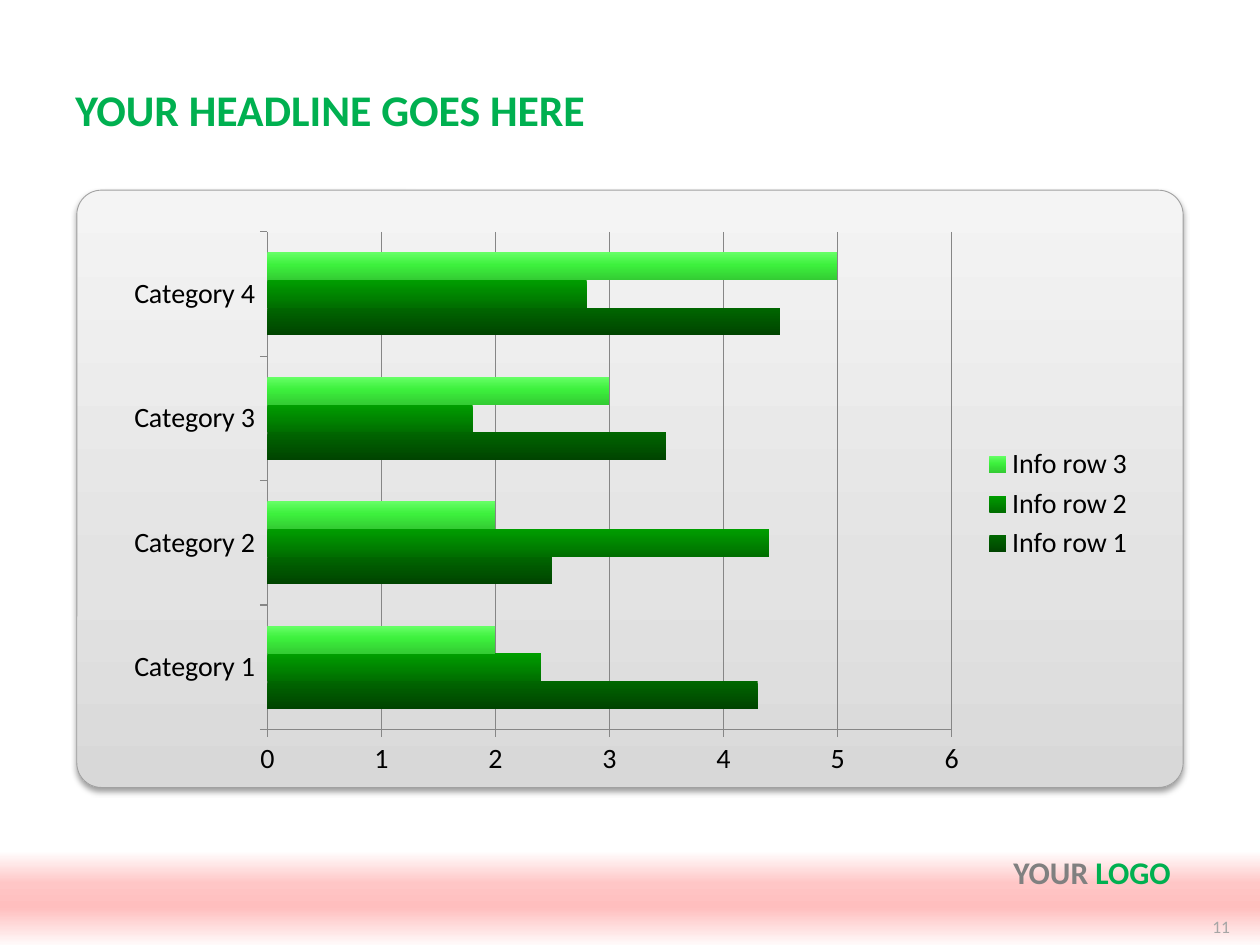
from lxml import etree
from pptx import Presentation
from pptx.chart.data import CategoryChartData
from pptx.dml.color import RGBColor
from pptx.enum.chart import XL_CHART_TYPE, XL_LEGEND_POSITION, XL_TICK_MARK
from pptx.enum.shapes import MSO_SHAPE
from pptx.enum.text import MSO_ANCHOR, PP_ALIGN
from pptx.oxml import parse_xml
from pptx.oxml.ns import nsdecls, qn
from pptx.util import Inches, Pt

BAR = XL_CHART_TYPE.BAR_CLUSTERED
RIGHT = XL_LEGEND_POSITION.RIGHT
OUT = XL_TICK_MARK.OUTSIDE
RECT, ROUND = MSO_SHAPE.RECTANGLE, MSO_SHAPE.ROUNDED_RECTANGLE
TOP, MID = MSO_ANCHOR.TOP, MSO_ANCHOR.MIDDLE
LEFT_AL, RIGHT_AL = PP_ALIGN.LEFT, PP_ALIGN.RIGHT

FONT = "Calibri"
WIDE, HIGH = 10, 7.5
CATS = [f"Category {n}" for n in range(1, 5)]
ROWS = [
    ("Info row 1", (4.3, 2.5, 3.5, 4.5), ((0, "006600"), (100, "004400"))),
    ("Info row 2", (2.4, 4.4, 1.8, 2.8), ((0, "009E00"), (100, "006E00"))),
    ("Info row 3", (2, 2, 3, 5), ((0, "66FF66"), (45, "3DF03D"), (100, "33CC33"))),
]
PANEL = ((0, "F4F4F4"), (65, "E3E3E3"), (100, "D8D8D8"))
BAND = ((0, "FFFFFF"), (35, "FFC6C6"), (60, "FFBEBE"), (100, "FFFAFA"))
PLOT = {"x": 0.148, "y": 0.02, "w": 0.663, "h": 0.878}
TEXTS = [
    ((0.5, 0.59, 9, 0.55), LEFT_AL, MID, 25, True,
     [("YOUR HEADLINE GOES HERE", "00B050")]),
    ((9.39, 7.2, 0.47, 0.3), RIGHT_AL, MID, 10, False, [("11", "A6A6A6")]),
    ((0.5, 6.72, 8.89, 0.55), RIGHT_AL, TOP, 18, True,
     [("YOUR ", "808080"), ("LOGO", "00B050")]),
]


def tint(color, code):
    """Set a colour from a hex string."""
    color.rgb = RGBColor.from_string(code)


def style(font, code, **vals):
    """Give a font its face, colour and other values."""
    for key, val in {"name": FONT, **vals}.items():
        setattr(font, key, val)
    tint(font.color, code)


def fade(fill, node, stops):
    """Fill from top to bottom with the given colour stops."""
    fill.gradient()
    fill.gradient_angle = 270
    stop_list = node.find(".//" + qn("a:gsLst"))
    for old in list(stop_list):
        stop_list.remove(old)
    for share, code in stops:
        stop = etree.SubElement(stop_list, qn("a:gs"), pos=str(share * 1000))
        etree.SubElement(stop, qn("a:srgbClr"), val=code)


def add_block(slide, kind, box, stops):
    """Add a shape with a gradient and neither line nor shadow."""
    shape = slide.shapes.add_shape(kind, *map(Inches, box))
    shape.shadow.inherit = False
    shape.line.fill.background()
    fade(shape.fill, shape._element, stops)
    return shape


def add_panel(slide):
    """Add the rounded panel with its outline and soft shadow."""
    panel = add_block(slide, ROUND, (0.61, 1.51, 8.78, 4.74), PANEL)
    panel.adjustments[0] = 0.041
    panel.line.width = Pt(0.5)
    panel.line.fill.solid()
    tint(panel.line.color, "A1A1A1")
    effects = panel._element.spPr.find(qn("a:effectLst"))
    effects.append(parse_xml(
        f'<a:outerShdw {nsdecls("a")} blurRad="{Pt(3.5)}" dist="{Pt(2)}" '
        'dir="5400000" rotWithShape="0"><a:srgbClr val="000000">'
        '<a:alpha val="38000"/></a:srgbClr></a:outerShdw>'))


def add_text(slide, box, align, anchor, size, bold, runs):
    """Add one line of coloured runs."""
    frame = slide.shapes.add_textbox(*map(Inches, box)).text_frame
    frame.word_wrap = True
    frame.vertical_anchor = anchor
    para = frame.paragraphs[0]
    para.alignment = align
    for text, code in runs:
        run = para.add_run()
        run.text = text
        style(run.font, code, size=Pt(size), bold=bold)


def place_plot(chart):
    """Fix the inner plot area at its shares of the chart."""
    area = chart._chartSpace.chart.plotArea
    for old in area.findall(qn("c:layout")):
        area.remove(old)
    layout = etree.Element(qn("c:layout"))
    manual = etree.SubElement(layout, qn("c:manualLayout"))
    etree.SubElement(manual, qn("c:layoutTarget"), val="inner")
    for side in "xy":
        etree.SubElement(manual, qn(f"c:{side}Mode"), val="edge")
    for key, share in PLOT.items():
        etree.SubElement(manual, qn(f"c:{key}"), val=str(share))
    area.insert(0, layout)


def add_bars(slide):
    """Add the clustered bar chart."""
    data = CategoryChartData()
    data.categories = CATS
    for name, vals, _ in ROWS:
        data.add_series(name, vals)
    box = map(Inches, (0.91, 1.75, 8.19, 4.5))
    chart = slide.shapes.add_chart(BAR, *box, data).chart
    chart.has_title = False
    style(chart.font, "000000", size=Pt(18))
    plot = chart.plots[0]
    plot.gap_width, plot.overlap = 150, 0
    plot.vary_by_categories = False
    for series, (_, _, stops) in zip(plot.series, ROWS):
        fade(series.format.fill, series._element, stops)
    cat, val = chart.category_axis, chart.value_axis
    val.minimum_scale, val.maximum_scale, val.major_unit = 0, 6, 1
    val.has_major_gridlines = True
    for axis in (cat, val):
        axis.major_tick_mark = OUT
        style(axis.tick_labels.font, "000000", size=Pt(16))
    for part in (cat, val, val.major_gridlines):
        part.format.line.width = Pt(0.75)
        tint(part.format.line.color, "868686")
    chart.has_legend = True
    chart.legend.position = RIGHT
    chart.legend.include_in_layout = False
    style(chart.legend.font, "000000", size=Pt(16))
    place_plot(chart)


def main():
    """Build the slide and save it."""
    deck = Presentation()
    deck.slide_width, deck.slide_height = Inches(WIDE), Inches(HIGH)
    slide = deck.slides.add_slide(deck.slide_layouts[6])
    add_panel(slide)
    add_block(slide, RECT, (0, HIGH * 0.9, WIDE, HIGH * 0.1), BAND)
    add_bars(slide)
    for item in TEXTS:
        add_text(slide, *item)
    deck.save("out.pptx")


if __name__ == "__main__":
    main()
